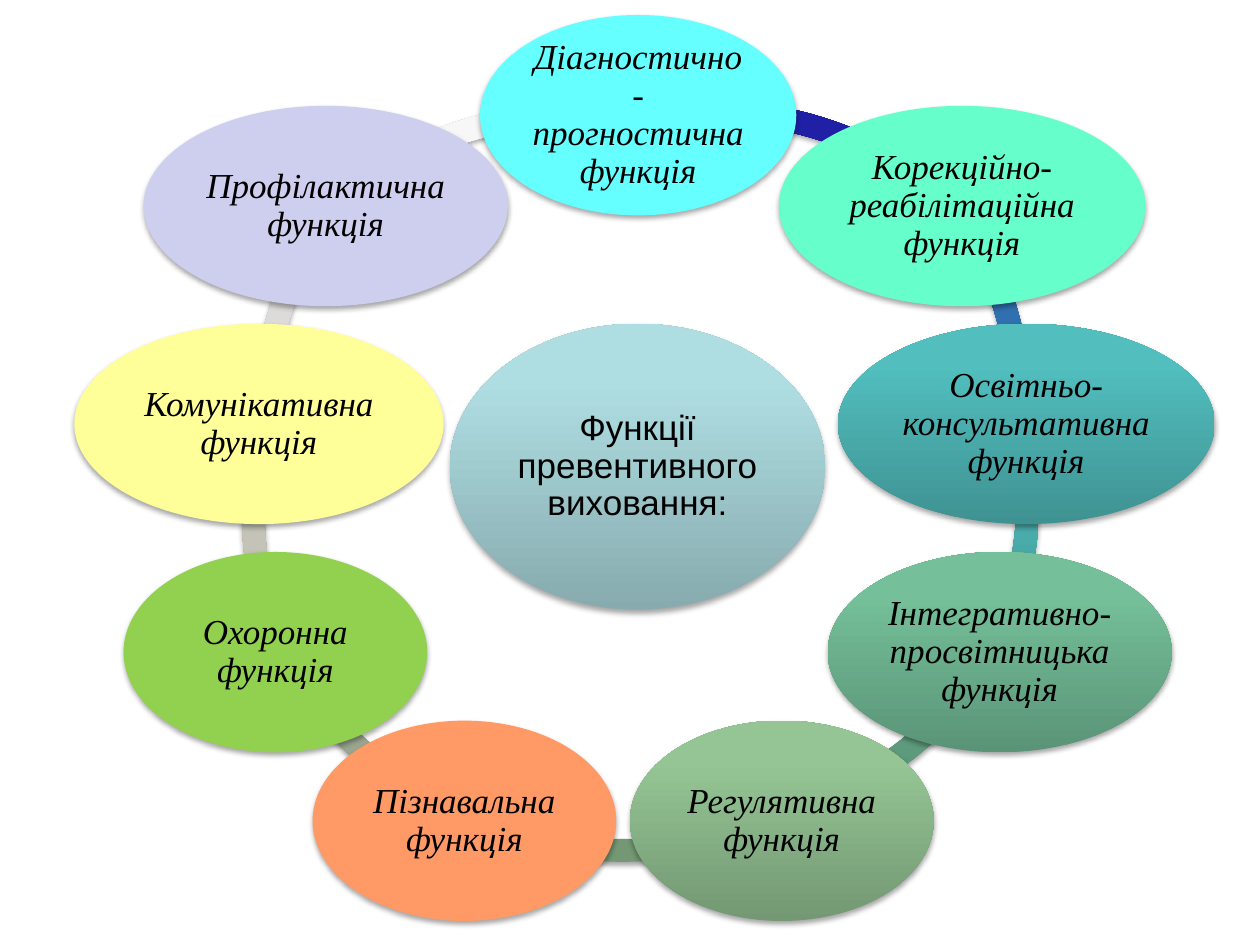
from copy import deepcopy
from lxml import etree
from pptx import Presentation
from pptx.dml.color import RGBColor
from pptx.enum.shapes import MSO_SHAPE
from pptx.enum.text import MSO_ANCHOR, PP_ALIGN
from pptx.oxml.ns import qn
from pptx.util import Pt

OVAL = MSO_SHAPE.OVAL
ARC = MSO_SHAPE.BLOCK_ARC
MIDDLE = MSO_ANCHOR.MIDDLE
CENTER = PP_ALIGN.CENTER

GREY = ("BEBEBE", "F7F7F7", "F8F8F8")
SAND = ("B1B0AF", "E6E5E3", "E7E6E4")
STONE = ("A6A69D", "D8D8CC", "D9D9CD")
SAGE = ("939E89", "BFCDB2", "C0CFB2")
LEAF = ("739873", "95C595", "95C795")
JADE = ("5A9477", "75C09A", "74C29B")
TEAL = ("3F9292", "52BEBE", "50C1C1")
BLUE = ("275A8E", "3375B8", "3076BC")
NAVY = ("1B1B7E", "2323A3", "2020A6")
MIST = ("87ABAE", "AFDEE2", "AFE0E4")

ARCS = [
    (115.9, 59, 227.28, 280.43, GREY),
    (144.7, 26.6, 178.78, 215.37, SAND),
    (138.2, 81.4, 157.46, 194.12, STONE),
    (130.3, 64.1, 111.46, 152.15, SAGE),
    (144.7, 70.6, 64.12, 115.88, LEAF),
    (180.7, 56.9, 30.05, 74.64, JADE),
    (172.1, 73.4, 348.16, 24.97, TEAL),
    (167.8, 24.5, 325.25, 1.73, BLUE),
    (196.6, 57.6, 258.16, 313.12, NAVY),
]
ROWS = [8.6, 60.5, 185, 315.4, 411.8]
NODES = [
    (274.3, 0, 180.7, "66FFFF", "Діагностично-прогностична функція"),
    (445, 1, 209.5, "66FFCC", "Корекційно-реабілітаційна функція"),
    (478.8, 2, 215.3, TEAL, "Освітньо-консультативна функція"),
    (473, 3, 196.6, JADE, "Iнтeгрaтивно-просвітницька функція"),
    (360, 4, 173.5, LEAF, "Регулятивна функція"),
    (178.6, 4, 173.5, "FF9966", "Пізнавальна функція"),
    (70.6, 3, 173.5, "92D050", "Охоронна функція"),
    (42.5, 2, 211, "FFFF99", "Комунікативна функція"),
    (82.1, 1, 208.1, "CECEEF", "Профілактична функція"),
]


def hue(code):
    return RGBColor.from_string(code)


def blend(shape, codes):
    shape.fill.gradient()
    shape.fill.gradient_angle = 90
    stops = shape._element.spPr.find(qn("a:gradFill")).find(qn("a:gsLst"))
    stops.append(deepcopy(stops[-1]))
    for stop, code, place in zip(shape.fill.gradient_stops, codes, (0, 0.8, 1)):
        stop.color.rgb = hue(code)
        stop.position = place


def shade(shape):
    shape.shadow.inherit = False
    effects = shape._element.spPr.find(qn("a:effectLst"))
    outer = etree.SubElement(
        effects, qn("a:outerShdw"), blurRad=str(Pt(3.1)), dist=str(Pt(1.8)),
        dir="5400000", rotWithShape="0")
    black = etree.SubElement(outer, qn("a:srgbClr"), val="000000")
    etree.SubElement(black, qn("a:alpha"), val="35000")


def form(slide, kind, box, paint):
    shape = slide.shapes.add_shape(kind, *map(Pt, box))
    if isinstance(paint, str):
        shape.fill.solid()
        shape.fill.fore_color.rgb = hue(paint)
    else:
        blend(shape, paint)
    shape.line.fill.background()
    shade(shape)
    return shape


def write(shape, text, font="Times New Roman", size=20, slant=True, color="000000"):
    frame = shape.text_frame
    frame.word_wrap = True
    frame.vertical_anchor = MIDDLE
    frame.margin_left = frame.margin_right = Pt(2)
    frame.margin_top = frame.margin_bottom = Pt(2)
    par = frame.paragraphs[0]
    par.alignment = CENTER
    par.line_spacing = 0.9
    par.space_after = Pt(7)
    run = par.add_run()
    run.text = text
    run.font.name = font
    run.font.size = Pt(size)
    run.font.italic = slant
    run.font.color.rgb = hue(color)


def ring(slide, side):
    for left, top, start, end, paint in ARCS:
        arc = form(slide, ARC, (left, top, side, side), paint)
        arc.adjustments[0] = start * 0.6
        arc.adjustments[1] = end * 0.6
        arc.adjustments[2] = 0.031


def hub(slide, box):
    write(form(slide, OVAL, box, MIST), "Функції превентивного виховання:",
          font="Arial", slant=False)


def nodes(slide, height):
    for left, row, width, paint, text in NODES:
        write(form(slide, OVAL, (left, ROWS[row], width, height), paint), text)


def main():
    deck = Presentation()
    deck.slide_width, deck.slide_height = Pt(720), Pt(540)
    slide = deck.slides.add_slide(deck.slide_layouts[6])
    ring(slide, 421.9)
    hub(slide, (257, 185, 214.6, 163.4))
    nodes(slide, 114.5)
    deck.save("out.pptx")


if __name__ == "__main__":
    main()
